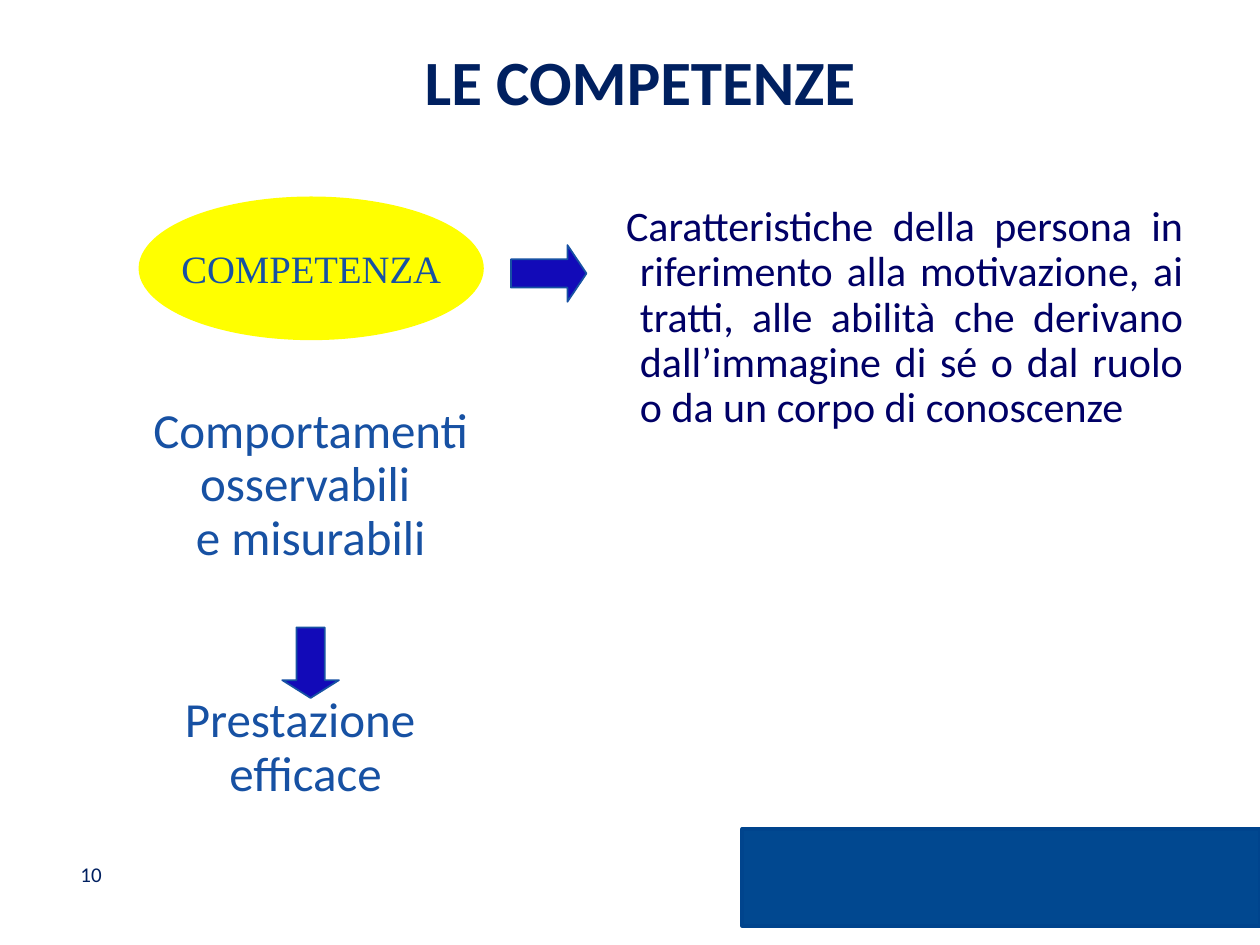
import dataclasses

import pptx
import pptx.dml.color
import pptx.enum.shapes
import pptx.enum.text
import pptx.util
from pptx.util import Inches

SHAPE = pptx.enum.shapes.MSO_SHAPE
ALIGN = pptx.enum.text.PP_ALIGN
ANCHOR = pptx.enum.text.MSO_ANCHOR


@dataclasses.dataclass(frozen=True)
class Theme:
    heading: str = "002060"
    body: str = "000066"
    accent: str = "1751A3"
    arrow: str = "120AB8"
    highlight: str = "FFFF00"
    band: str = "014890"
    band_edge: str = "00448D"
    font: str = "Calibri"
    serif: str = "Times New Roman"
    title_size: float = 36
    outcome_size: float = 28
    definition_size: float = 24
    concept_size: float = 22.1
    number_size: float = 12


THEME = Theme()


def rgb(value):
    return pptx.dml.color.RGBColor.from_string(value)


def write_text(holder, lines, *, size, color, font=THEME.font, bold=False,
               align=ALIGN.LEFT, anchor=ANCHOR.TOP, wrap=True,
               line_spacing=1.0, gap=0, hanging=0):
    frame = holder.text_frame
    frame.word_wrap = wrap
    frame.vertical_anchor = anchor
    for index, line in enumerate(lines):
        paragraph = frame.add_paragraph() if index else frame.paragraphs[0]
        paragraph.alignment = align
        paragraph.line_spacing = line_spacing
        paragraph.space_before = pptx.util.Pt(gap if index else 0)
        if hanging:
            properties = paragraph._p.get_or_add_pPr()
            properties.set("marL", str(Inches(hanging)))
            properties.set("indent", str(-Inches(hanging)))
        run = paragraph.add_run()
        run.text = line
        run.font.name = font
        run.font.size = pptx.util.Pt(size)
        run.font.bold = bold
        run.font.color.rgb = rgb(color)


def add_box(slide, left, top, width, height):
    return slide.shapes.add_textbox(
        Inches(left), Inches(top), Inches(width), Inches(height))


def add_filled(slide, kind, left, top, width, height, fill, edge=None, edge_width=1):
    figure = slide.shapes.add_shape(
        kind, Inches(left), Inches(top), Inches(width), Inches(height))
    figure.shadow.inherit = False
    figure.fill.solid()
    figure.fill.fore_color.rgb = rgb(fill)
    if edge:
        figure.line.color.rgb = rgb(edge)
        figure.line.width = pptx.util.Pt(edge_width)
    else:
        figure.line.fill.background()
    return figure


def add_arrow(slide, left, top, width, height, head, rotation=0):
    arrow = add_filled(slide, SHAPE.DOWN_ARROW, left, top, width, height,
                       THEME.arrow, THEME.accent)
    arrow.adjustments[0] = 0.5
    arrow.adjustments[1] = head
    arrow.rotation = rotation


def add_footer(slide, left, top, width, height):
    add_filled(slide, SHAPE.RECTANGLE, left + width - 4.11, top, 4.11, height,
               THEME.band, THEME.band_edge, 2)
    number = add_box(slide, left + 0.54, top + 0.16, 2.33, 0.4)
    write_text(number, ["10"], size=THEME.number_size, color=THEME.heading,
               anchor=ANCHOR.MIDDLE)


def add_title(slide, left, top, width, height):
    title = slide.shapes.title
    title.left, title.top = Inches(left), Inches(top)
    title.width, title.height = Inches(width), Inches(height)
    write_text(title, ["LE COMPETENZE"], size=THEME.title_size, color=THEME.heading,
               bold=True, align=ALIGN.CENTER, anchor=ANCHOR.MIDDLE)


def add_definition(slide, left, top, width, height):
    concept = add_filled(slide, SHAPE.OVAL, left, top, 2.74, 1.14, THEME.highlight)
    write_text(concept, ["COMPETENZA"], size=THEME.concept_size, color=THEME.accent,
               font=THEME.serif, align=ALIGN.CENTER, anchor=ANCHOR.MIDDLE, wrap=False)
    add_arrow(slide, left + 3.03, top + 0.31, 0.45, 0.6, 0.336, rotation=270)
    definition = add_box(slide, left + 3.77, top + 0.02, width - 3.77, height - 0.02)
    write_text(
        definition,
        ["Caratteristiche della persona in riferimento alla motivazione, ai tratti, "
         "alle abilità che derivano dall’immagine di sé o dal ruolo o da un corpo "
         "di conoscenze"],
        size=THEME.definition_size, color=THEME.body, align=ALIGN.JUSTIFY,
        line_spacing=0.9, hanging=0.11)


def add_outcomes(slide, left, top, width, height):
    outcome_format = dict(size=THEME.outcome_size, color=THEME.accent,
                          align=ALIGN.CENTER, line_spacing=0.5,
                          gap=THEME.outcome_size / 2)
    behaviours = add_box(slide, left, top, width, 1.28)
    write_text(behaviours, ["Comportamenti", "osservabili ", "e misurabili"],
               **outcome_format)
    add_arrow(slide, left + (width - 0.45) / 2, top + 1.66, 0.45, 0.56, 0.314)
    performance = add_box(slide, left + 0.25, top + height - 0.81, 2.37, 0.81)
    write_text(performance, ["Prestazione ", "efficace"], **outcome_format)


def main():
    deck = pptx.Presentation()
    deck.slide_width, deck.slide_height = Inches(10), Inches(7.5)
    slide = deck.slides.add_slide(deck.slide_layouts.get_by_name("Title Only"))
    add_footer(slide, 0, 6.58, 10, 0.77)
    add_title(slide, 1.1, 0.36, 7.96, 0.56)
    add_definition(slide, 1.1, 1.56, 8.39, 1.94)
    add_outcomes(slide, 0.99, 3.32, 2.95, 3.11)
    deck.save("out.pptx")


if __name__ == "__main__":
    main()
